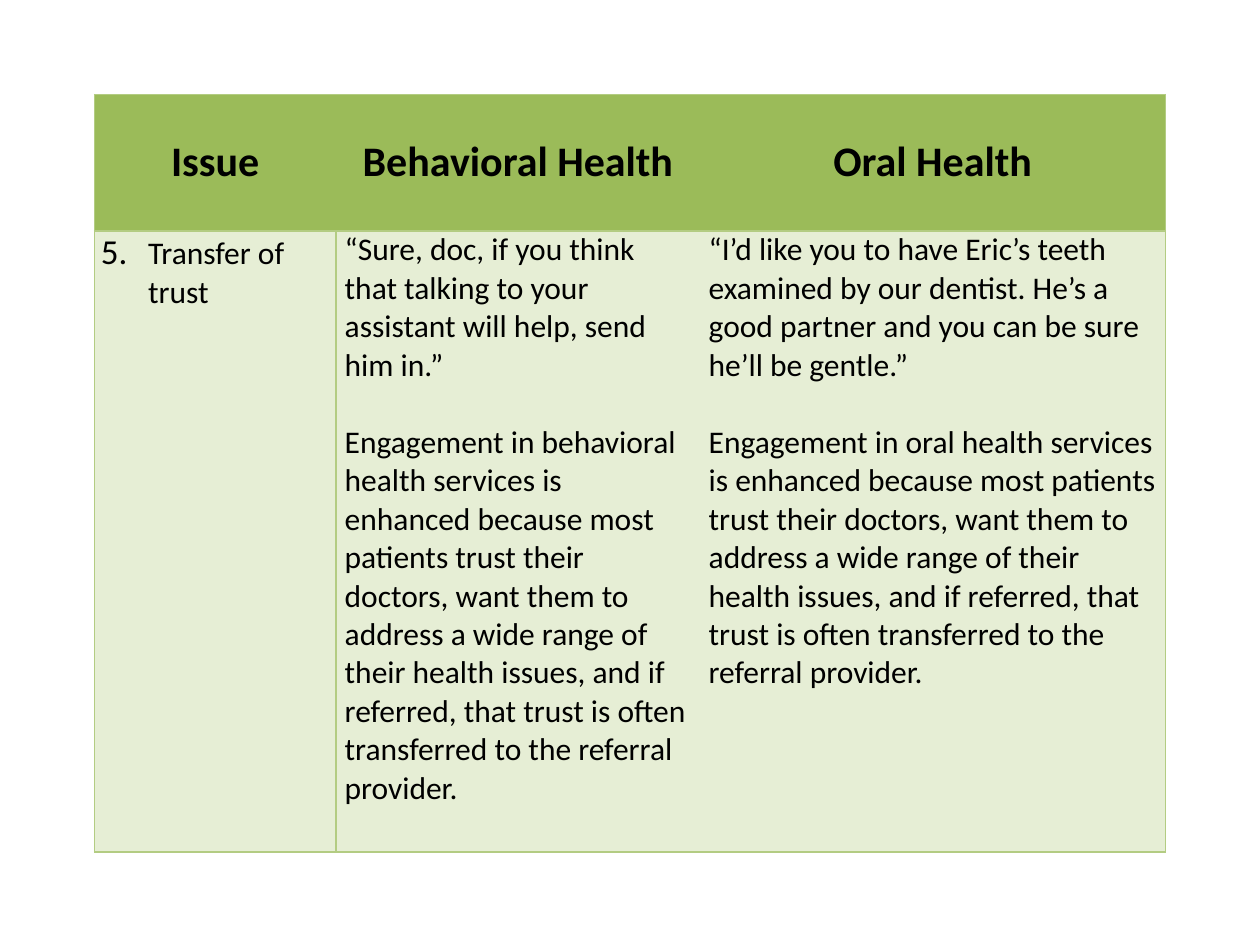
import pptx
import pptx.util
import pptx.dml.color
import pptx.enum.text
import pptx.oxml
import pptx.oxml.ns

Pt = pptx.util.Pt
RGB = pptx.dml.color.RGBColor
ALIGN = pptx.enum.text.PP_ALIGN
ANCHOR = pptx.enum.text.MSO_ANCHOR

HEADERS = ["Issue", "Behavioral Health", "Oral Health"]
ISSUE = ("5.\t", "Transfer of trust")
ENGAGEMENT = (
    "Engagement in {} services is enhanced because most patients trust their "
    "doctors, want them to address a wide range of their health issues, and if "
    "referred, that trust is often transferred to the referral provider."
)
ANSWERS = [
    ("“Sure, doc, if you think that talking to your assistant will help, send him in.”",
     ENGAGEMENT.format("behavioral health")),
    ("“I’d like you to have Eric’s teeth examined by our dentist. "
     "He’s a good partner and you can be sure he’ll be gentle.”",
     ENGAGEMENT.format("oral health")),
]
THEME = {
    "font": "Calibri", "text": "000000", "border": "B3CC82",
    "fills": ["9BBB59", "E6EED5"],
    "header": 24, "number": 20, "body": 18,
}
LEFT, TOP = 54, 54
COLS = [138, 208, 266]
ROWS = [78, 355]
INDENT, GAP = 27, 22


def style_run(r, size, bold=False):
    r.font.name = THEME["font"]
    r.font.size = Pt(size)
    r.font.bold = bold
    r.font.color.rgb = RGB.from_string(THEME["text"])


def set_borders(cell, sides):
    ns = pptx.oxml.ns.nsdecls("a")
    for i, side in enumerate("LRTB"):
        paint = "<a:noFill/>"
        if side in sides:
            paint = f'<a:solidFill><a:srgbClr val="{THEME["border"]}"/></a:solidFill>'
        line = f'<a:ln{side} {ns} w="{Pt(1)}">{paint}</a:ln{side}>'
        cell._tc.get_or_add_tcPr().insert(i, pptx.oxml.parse_xml(line))


def style_cell(cell, row, col):
    cell.fill.solid()
    cell.fill.fore_color.rgb = RGB.from_string(THEME["fills"][row])
    cell.margin_left = cell.margin_right = Pt(5 if row and col else 3.6)
    cell.margin_top = cell.margin_bottom = 0
    sides = "TB"
    if col == 0 or (row == 1 and col == 1):
        sides += "L"
    if col == 2 or (row == 1 and col == 0):
        sides += "R"
    set_borders(cell, sides)


def fill_header(cell, text):
    cell.text_frame.text = text
    cell.vertical_anchor = ANCHOR.MIDDLE
    p = cell.text_frame.paragraphs[0]
    p.alignment = ALIGN.CENTER
    style_run(p.runs[0], THEME["header"], True)


def fill_issue(cell):
    p = cell.text_frame.paragraphs[0]
    pPr = p._p.get_or_add_pPr()
    pPr.set("marL", str(Pt(INDENT)))
    pPr.set("indent", str(-Pt(INDENT)))
    for text, size in zip(ISSUE, (THEME["number"], THEME["body"])):
        r = p.add_run()
        r.text = text
        style_run(r, size)


def fill_answer(cell, texts):
    tf = cell.text_frame
    tf.text = "\n".join(texts)
    tf.paragraphs[0].space_after = Pt(GAP)
    for p in tf.paragraphs:
        style_run(p.runs[0], THEME["body"])


def main():
    prs = pptx.Presentation()
    prs.slide_width, prs.slide_height = Pt(720), Pt(540)
    s = prs.slides.add_slide(prs.slide_layouts[6])
    table = s.shapes.add_table(len(ROWS), len(COLS), Pt(LEFT), Pt(TOP),
                               Pt(sum(COLS)), Pt(sum(ROWS))).table
    table.first_row = table.horz_banding = False
    for column, width in zip(table.columns, COLS):
        column.width = Pt(width)
    for row, height in zip(table.rows, ROWS):
        row.height = Pt(height)
    for row in range(len(ROWS)):
        for col in range(len(COLS)):
            style_cell(table.cell(row, col), row, col)
    for col, text in enumerate(HEADERS):
        fill_header(table.cell(0, col), text)
    fill_issue(table.cell(1, 0))
    for col, texts in enumerate(ANSWERS, 1):
        fill_answer(table.cell(1, col), texts)
    prs.save("out.pptx")


if __name__ == "__main__":
    main()
